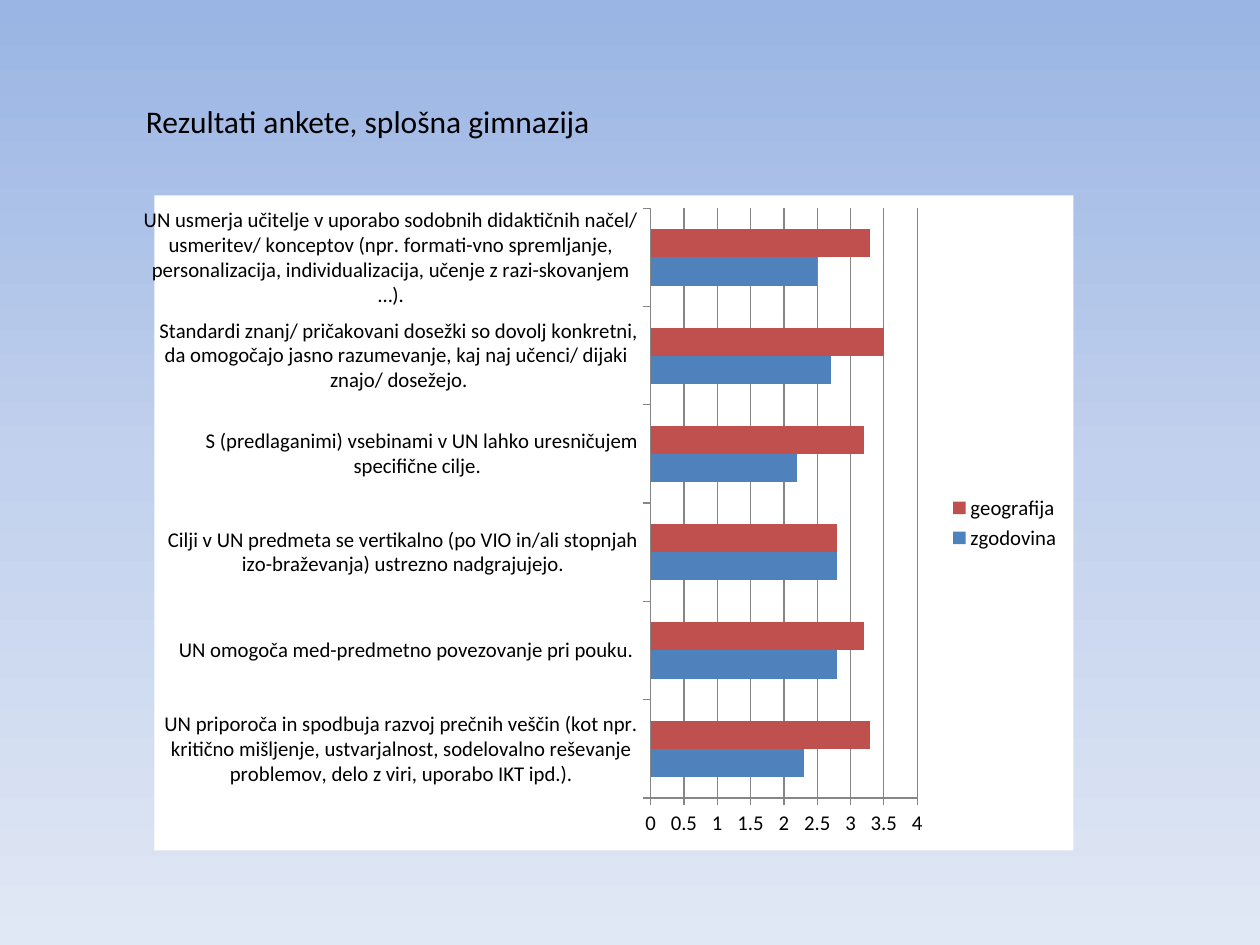
from lxml.etree import SubElement
from copy import deepcopy

from pptx import Presentation
from pptx.chart.data import CategoryChartData
from pptx.dml.color import RGBColor
from pptx.enum.chart import XL_CHART_TYPE, XL_LEGEND_POSITION, XL_TICK_MARK
from pptx.enum.text import MSO_AUTO_SIZE
from pptx.oxml import parse_xml
from pptx.oxml.ns import nsdecls, qn
from pptx.util import Inches, Pt

COLORS = {
    "sky_top": "9AB5E4",
    "sky_middle": "C2D1ED",
    "sky_bottom": "E1E8F5",
    "text": "000000",
    "panel": "FFFFFF",
    "grid": "868686",
    "zgodovina": "4F81BD",
    "geografija": "C0504D",
}
FONT = "Calibri"

# Survey statements, from the bottom of the chart upwards
STATEMENTS = [
    "UN priporoča in spodbuja razvoj prečnih veščin (kot npr. kritično mišljenje, "
    "ustvarjalnost, sodelovalno reševanje problemov, delo z viri, uporabo IKT ipd.).",
    "UN omogoča med-predmetno povezovanje pri pouku. ",
    "Cilji v UN predmeta se vertikalno (po VIO in/ali stopnjah izo-braževanja) "
    "ustrezno nadgrajujejo.",
    "S (predlaganimi) vsebinami v UN lahko uresničujem specifične cilje.  ",
    "Standardi znanj/ pričakovani dosežki so dovolj konkretni, da omogočajo jasno "
    "razumevanje, kaj naj učenci/ dijaki  znajo/ dosežejo.",
    "UN usmerja učitelje v uporabo sodobnih didaktičnih načel/ usmeritev/ konceptov "
    "(npr. formati-vno spremljanje, personalizacija, individualizacija, učenje z "
    "razi-skovanjem …).",
]
SCORES = {
    "zgodovina": [2.3, 2.8, 2.8, 2.2, 2.7, 2.5],
    "geografija": [3.3, 3.2, 2.8, 3.2, 3.5, 3.3],
}
# Inner plot area as fractions of the chart
PLOT_AREA = {"x": 0.54, "y": 0.02, "w": 0.29, "h": 0.9}


def color(name):
    return RGBColor.from_string(COLORS[name])


def set_values(target, values):
    for name, value in values.items():
        setattr(target, name, value)


def format_font(font, size):
    set_values(font, {"name": FONT, "size": Pt(size)})
    font.color.rgb = color("text")


def format_line(line):
    line.color.rgb = color("grid")
    line.width = Pt(0.75)


def paint_background(page):
    fill = page.background.fill
    fill.gradient()
    fill.gradient_angle = 270
    stop_list = next(page.element.iter(qn("a:gsLst")))
    stop_list.insert(1, deepcopy(stop_list[0]))
    names = ("sky_top", "sky_middle", "sky_bottom")
    for index, (stop, name) in enumerate(zip(fill.gradient_stops, names)):
        stop.position = index / 2
        stop.color.rgb = color(name)


def add_title(page, text):
    box = page.shapes.add_textbox(Inches(1.06), Inches(0.76), Inches(3.76), Inches(0.4))
    set_values(box.text_frame, {"word_wrap": False, "auto_size": MSO_AUTO_SIZE.SHAPE_TO_FIT_TEXT})
    span = box.text_frame.paragraphs[0].add_run()
    span.text = text
    format_font(span.font, 18)


def fill_chart_panel(chart):
    panel = parse_xml(
        f'<c:spPr {nsdecls("c", "a")}><a:solidFill><a:srgbClr val="{COLORS["panel"]}"/>'
        "</a:solidFill><a:ln><a:noFill/></a:ln></c:spPr>"
    )
    chart.element.find(qn("c:chart")).addnext(panel)


def place_plot_area(chart):
    plot_area = next(chart.element.iter(qn("c:plotArea")))
    for old_layout in plot_area.findall(qn("c:layout")):
        plot_area.remove(old_layout)
    layout = parse_xml(f'<c:layout {nsdecls("c")}><c:manualLayout/></c:layout>')
    settings = {"layoutTarget": "inner", "xMode": "edge", "yMode": "edge", **PLOT_AREA}
    for name, value in settings.items():
        SubElement(layout[0], qn(f"c:{name}")).set("val", str(value))
    plot_area.insert(0, layout)


def add_survey_chart(page):
    data = CategoryChartData()
    data.categories = STATEMENTS
    for subject, scores in SCORES.items():
        data.add_series(subject, scores)
    chart = page.shapes.add_chart(
        XL_CHART_TYPE.BAR_CLUSTERED,
        Inches(1.14), Inches(1.55), Inches(7.38), Inches(5.2), data,
    ).chart
    format_font(chart.font, 12)
    set_values(chart, {"has_title": False, "has_legend": True})
    set_values(chart.legend, {"position": XL_LEGEND_POSITION.RIGHT, "include_in_layout": False})

    # Bars
    plot = chart.plots[0]
    set_values(plot, {"gap_width": 150, "overlap": 0, "vary_by_categories": False})
    for series in plot.series:
        series.format.fill.solid()
        series.format.fill.fore_color.rgb = color(series.name)

    # Axes
    for axis in (chart.category_axis, chart.value_axis):
        set_values(axis, {
            "major_tick_mark": XL_TICK_MARK.OUTSIDE,
            "minor_tick_mark": XL_TICK_MARK.NONE,
        })
        format_line(axis.format.line)
    set_values(chart.value_axis, {
        "minimum_scale": 0, "maximum_scale": 4, "major_unit": 0.5, "has_major_gridlines": True,
    })
    format_line(chart.value_axis.major_gridlines.format.line)

    fill_chart_panel(chart)
    place_plot_area(chart)


def main():
    deck = Presentation()
    set_values(deck, {"slide_width": Inches(10), "slide_height": Inches(7.5)})
    page = deck.slides.add_slide(deck.slide_layouts[6])
    paint_background(page)
    add_survey_chart(page)
    add_title(page, "Rezultati ankete, splošna gimnazija")
    deck.save("out.pptx")


if __name__ == "__main__":
    main()
